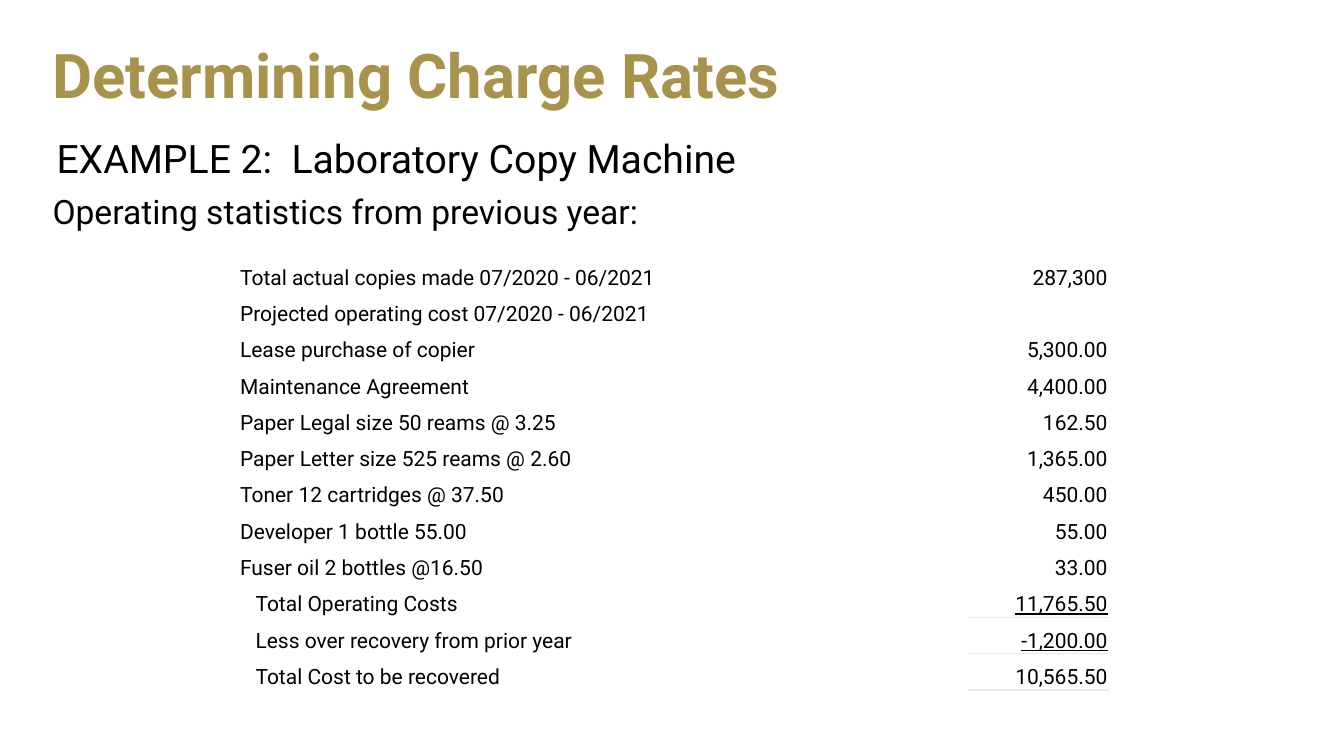
from pptx import Presentation
from pptx.dml.color import RGBColor as Rgb
from pptx.enum.text import MSO_ANCHOR as Anchor, MSO_AUTO_SIZE as Fit, PP_ALIGN as Align
from pptx.oxml import parse_xml
from pptx.oxml.ns import nsdecls
from pptx.util import Cm, Pt

HUES = {"gold": "A7934B", "ink": "000000", "rule": "EEECE1"}
COSTS = [
    ("Total actual copies made 07/2020 - 06/2021", "287,300"),
    ("Projected operating cost 07/2020 - 06/2021", ""),
    ("Lease purchase of copier", "5,300.00"),
    ("Maintenance Agreement", "4,400.00"),
    ("Paper Legal size 50 reams @ 3.25", "162.50"),
    ("Paper Letter size 525 reams @ 2.60", "1,365.00"),
    ("Toner 12 cartridges @ 37.50", "450.00"),
    ("Developer 1 bottle 55.00", "55.00"),
    ("Fuser oil 2 bottles @16.50", "33.00"),
]
TOTALS = [
    ("Total Operating Costs", "11,765.50"),
    ("Less over recovery from prior year", "-1,200.00"),
    ("Total Cost to be recovered", "10,565.50"),
]


def apply(item, **form):
    """Set each named attribute of an item."""
    for name, value in form.items():
        setattr(item, name, value)


def write(para, text, size, hue="ink", **form):
    """Add one styled run to a paragraph."""
    run = para.add_run()
    run.text = text
    apply(run.font, name="Roboto", size=Pt(size), **form)
    run.font.color.rgb = Rgb.from_string(HUES[hue])


def place(shape, box):
    """Move a shape to its box, given in centimetres."""
    apply(shape, **dict(zip(("left", "top", "width", "height"), map(Cm, box))))


def rule(cell, side, width):
    """Draw a border on one side of a cell."""
    line = parse_xml(
        f'<a:ln{side} {nsdecls("a")} w="{Pt(width)}"><a:solidFill>'
        f'<a:srgbClr val="{HUES["rule"]}"/></a:solidFill></a:ln{side}>')
    cell._tc.get_or_add_tcPr().insert(0, line)


def head(slide, box):
    """Fill the title."""
    title = slide.shapes.title
    place(title, box)
    frame = title.text_frame
    apply(frame, vertical_anchor=Anchor.MIDDLE, word_wrap=True, auto_size=Fit.NONE)
    para = frame.paragraphs[0]
    apply(para, alignment=Align.LEFT, line_spacing=0.9)
    write(para, "Determining Charge Rates", 44, "gold", bold=True)


def intro(slide, box):
    """Fill the body with the two opening lines."""
    body = slide.placeholders[1]
    place(body, box)
    frame = body.text_frame
    apply(frame, vertical_anchor=Anchor.TOP, word_wrap=True, auto_size=Fit.NONE)
    lines = [("EXAMPLE 2:  Laboratory Copy Machine", 28, 0.1, 0),
             ("Operating statistics from previous year:", 24, 0, 10)]
    for num, (text, size, left, gap) in enumerate(lines):
        para = frame.add_paragraph() if num else frame.paragraphs[0]
        props = para._p.get_or_add_pPr()
        props.set("marL", str(Cm(left)))
        props.set("indent", "0")
        props.append(parse_xml(f'<a:buNone {nsdecls("a")}/>'))
        apply(para, line_spacing=0.9, space_before=Pt(gap))
        write(para, text, size)


def ledger(slide, box):
    """Build the cost table with its ruled totals."""
    rows = COSTS + TOTALS
    table = slide.shapes.add_table(len(rows), 3, *map(Cm, box)).table
    apply(table, first_row=False, horz_banding=False)
    for col, width in zip(table.columns, (14.43, 3.96, 3.53)):
        col.width = Cm(width)
    for cell in table.iter_cells():
        apply(cell, margin_left=Cm(0.03), margin_right=Cm(0.03), margin_top=Cm(0.03),
              margin_bottom=0, vertical_anchor=Anchor.BOTTOM)
        cell.fill.background()
    for num, (label, cost) in enumerate(rows):
        name, value = table.cell(num, 0), table.cell(num, 2)
        write(name.text_frame.paragraphs[0], label, 15)
        if cost:
            para = value.text_frame.paragraphs[0]
            para.alignment = Align.RIGHT
            last = num == len(rows) - 1
            total = num >= len(COSTS)
            write(para, cost, 15, underline=total and not last)
            if total:
                name.margin_left = Cm(0.42)
                rule(value, "B", 2 if last else 0.5)
                if num > len(COSTS):
                    rule(value, "T", 0.5)


def main():
    """Build and save the slide."""
    deck = Presentation()
    apply(deck, slide_width=Cm(33.87), slide_height=Cm(19.05))
    slide = deck.slides.add_slide(deck.slide_layouts[1])
    head(slide, (1.07, 0.56, 31.75, 2.82))
    intro(slide, (1.07, 3.38, 31.75, 15.67))
    ledger(slide, (6.02, 6.4, 21.92, 10.98))
    deck.save("out.pptx")


if __name__ == "__main__":
    main()
